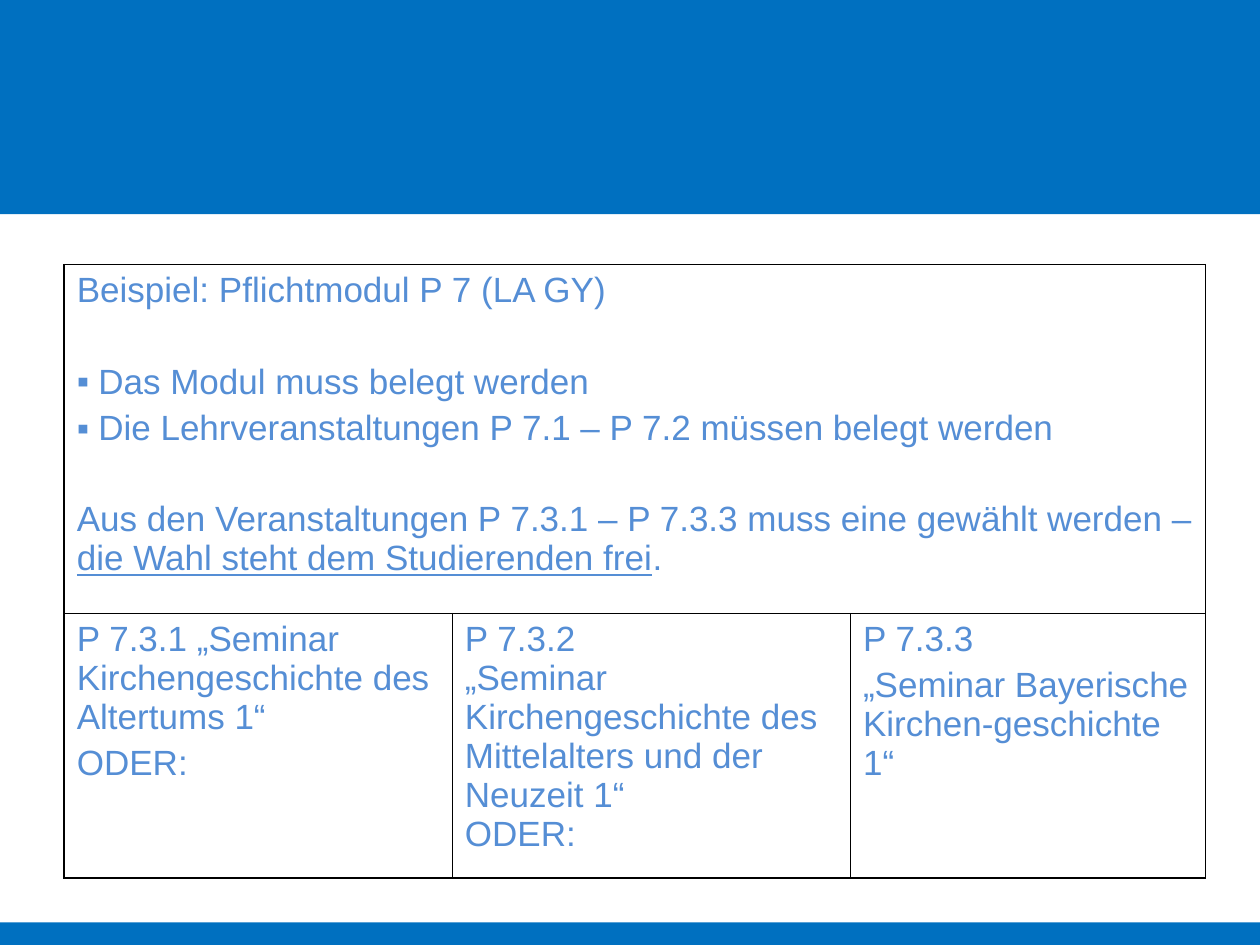
from lxml import etree
from pptx import Presentation
from pptx.dml.color import RGBColor
from pptx.enum import shapes
from pptx.oxml import ns
from pptx.util import Inches, Pt

COLORS = {"band": "0070C0", "text": "558ED5", "border": "000000", "cell": "FFFFFF"}
PARAGRAPH_GAP = 4
SECTION_GAP = 30


def color(name):
    return RGBColor.from_string(COLORS[name])


def write(frame, content, first=False, before=PARAGRAPH_GAP, bullet=False, underlined=""):
    para = frame.paragraphs[0] if first else frame.add_paragraph()
    if bullet:
        props = para._p.get_or_add_pPr()
        props.set("marL", str(Inches(0.17)))
        props.set("indent", str(-Inches(0.17)))
        bullet_color = etree.SubElement(props, ns.qn("a:buClr"))
        etree.SubElement(bullet_color, ns.qn("a:srgbClr"), val=COLORS["text"])
        etree.SubElement(props, ns.qn("a:buFont"), typeface="Arial")
        etree.SubElement(props, ns.qn("a:buChar"), char="▪")
    para.space_before = Pt(0 if first else before)
    start, marked, end = content.partition(underlined) if underlined else (content, "", "")
    for piece in filter(None, (start, marked, end)):
        span = para.add_run()
        span.text = piece
        span.font.name = "Arial"
        span.font.size = Pt(20)
        span.font.color.rgb = color("text")
        if piece == marked:
            span.font.underline = True


deck = Presentation()
deck.slide_width, deck.slide_height = Inches(10), Inches(7.5)
page = deck.slides.add_slide(deck.slide_layouts[6])

for top, height in ((0, 1.7), (7.32, 0.18)):
    band = page.shapes.add_shape(
        shapes.MSO_SHAPE.RECTANGLE, 0, Inches(top), deck.slide_width, Inches(height))
    band.shadow.inherit = False
    band.fill.solid()
    band.fill.fore_color.rgb = color("band")
    band.line.fill.background()

table = page.shapes.add_table(
    2, 3, Inches(0.51), Inches(2.1), Inches(9.06), Inches(4.87)).table
table.first_row = table.horz_banding = False
for column, width in zip(table.columns, (3.08, 3.16, 2.82)):
    column.width = Inches(width)
for row, height in zip(table.rows, (2.77, 2.1)):
    row.height = Inches(height)

for cell in table.iter_cells():
    cell.fill.solid()
    cell.fill.fore_color.rgb = color("cell")
    props = cell._tc.get_or_add_tcPr()
    for position, side in enumerate(("lnL", "lnR", "lnT", "lnB")):
        border = etree.Element(ns.qn("a:" + side), w=str(Pt(1)))
        fill = etree.SubElement(border, ns.qn("a:solidFill"))
        etree.SubElement(fill, ns.qn("a:srgbClr"), val=COLORS["border"])
        props.insert(position, border)

table.cell(0, 0).merge(table.cell(0, 2))
overview = table.cell(0, 0).text_frame
write(overview, "Beispiel: Pflichtmodul P 7 (LA GY)", first=True)
write(overview, "Das Modul muss belegt werden", before=SECTION_GAP, bullet=True)
write(overview, "Die Lehrveranstaltungen P 7.1 – P 7.2 müssen belegt werden", bullet=True)
write(overview,
      "Aus den Veranstaltungen P 7.3.1 – P 7.3.3 muss eine gewählt werden – "
      "die Wahl steht dem Studierenden frei.",
      before=SECTION_GAP, underlined="die Wahl steht dem Studierenden frei")

seminars = (
    (PARAGRAPH_GAP, ("P 7.3.1 „Seminar Kirchengeschichte des Altertums 1“", "ODER:")),
    (0, ("P 7.3.2", "„Seminar Kirchengeschichte des Mittelalters und der Neuzeit 1“", "ODER:")),
    (PARAGRAPH_GAP, ("P 7.3.3", "„Seminar Bayerische Kirchen-geschichte 1“")),
)
for column, (gap, lines) in enumerate(seminars):
    for number, line in enumerate(lines):
        write(table.cell(1, column).text_frame, line, first=number == 0, before=gap)

deck.save("out.pptx")
